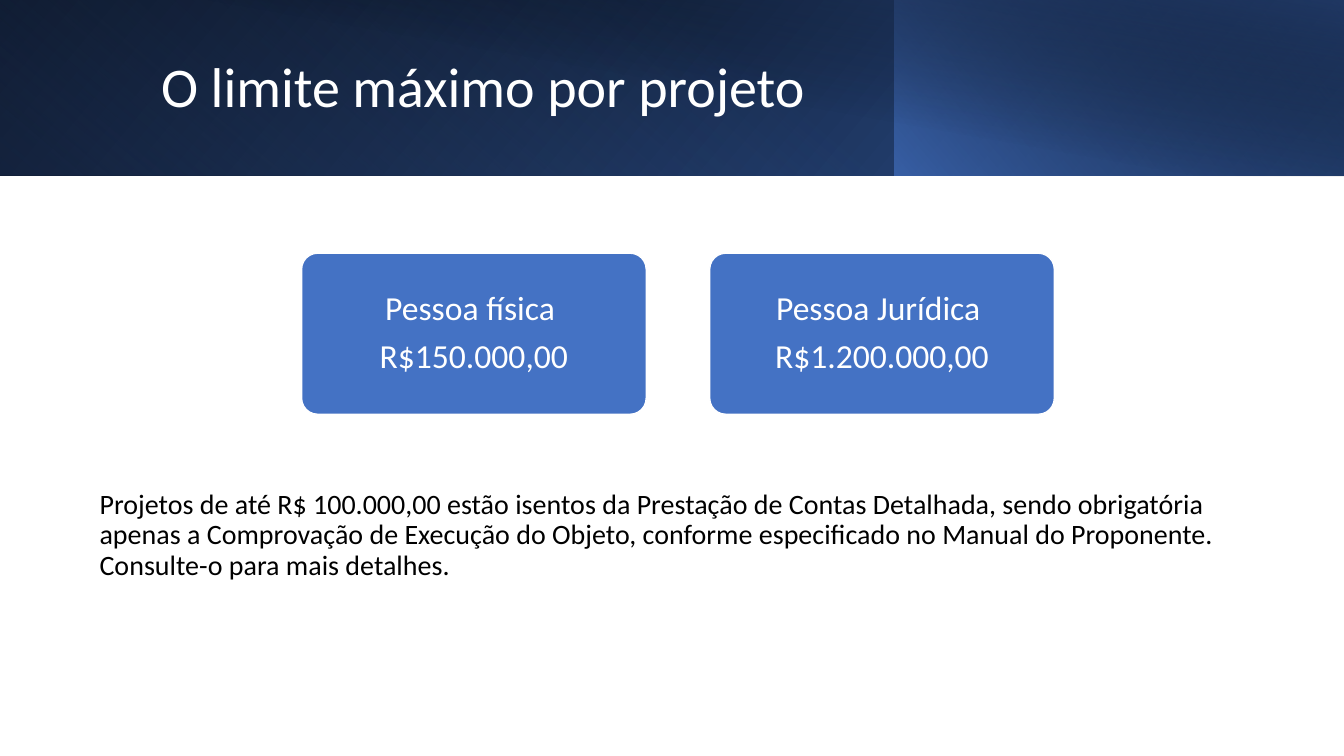
from lxml.etree import SubElement
from pptx import Presentation
from pptx.dml.color import RGBColor
from pptx.enum.shapes import MSO_SHAPE
from pptx.enum.text import MSO_ANCHOR, PP_ALIGN
from pptx.oxml.ns import qn
from pptx.util import Cm, Pt

WHITE = RGBColor(0xFF, 0xFF, 0xFF)
BLACK = RGBColor(0x00, 0x00, 0x00)
BLUE = RGBColor(0x44, 0x72, 0xC4)
NAVY = RGBColor(0x20, 0x38, 0x64)
STEEL = RGBColor(0x2F, 0x55, 0x97)
FONT = "Calibri"
WIDE, HIGH = 33.87, 19.05


def write(frame, lines, size, color, align=PP_ALIGN.LEFT, after=0):
    """Fill a text frame with one paragraph per line, centred vertically."""
    frame.word_wrap = True
    frame.vertical_anchor = MSO_ANCHOR.MIDDLE
    frame.text = "\n".join(lines)
    for para in frame.paragraphs:
        para.alignment = align
        para.line_spacing = 0.9
        para.space_after = Pt(after)
        for run in para.runs:
            run.font.name = FONT
            run.font.size = Pt(size)
            run.font.color.rgb = color


def add_box(slide, kind, box):
    """Add a preset shape without shadow or outline."""
    shape = slide.shapes.add_shape(kind, *map(Cm, box))
    shape.shadow.inherit = False
    shape.line.fill.background()
    return shape


def add_layer(slide, box, stops, angle, flip=True, turn=0):
    """Add a rectangle with a gradient of (position, colour, opacity) stops."""
    shape = add_box(slide, MSO_SHAPE.RECTANGLE, box)
    shape.rotation = turn
    if flip:
        shape.element.spPr.find(qn("a:xfrm")).set("flipH", "1")
    shape.fill.gradient()
    grad = shape.element.spPr.find(qn("a:gradFill"))
    for child in list(grad):
        grad.remove(child)
    ramp = SubElement(grad, qn("a:gsLst"))
    for place, color, alpha in stops:
        stop = SubElement(ramp, qn("a:gs"), pos=str(place * 1000))
        tint = SubElement(stop, qn("a:srgbClr"), val=str(color))
        if alpha < 100:
            SubElement(tint, qn("a:alpha"), val=str(alpha * 1000))
    SubElement(grad, qn("a:lin"), ang=str(angle * 60000), scaled="0")


def add_header(slide, box, title):
    """Draw the layered gradient band and its title."""
    left, top, width, height = box
    split = width * 2 / 3
    inset = 1.27
    add_layer(slide, box, [(0, BLACK, 100), (100, STEEL, 100)], 140)
    add_layer(slide, (left, top, split, height),
              [(20, BLUE, 0), (100, NAVY, 55)], 230, turn=180)
    add_layer(slide, (left + split - 0.03, top, width - split + 0.03, height),
              [(0, BLUE, 66), (100, BLACK, 30)], 220)
    add_layer(slide, (left + inset, top, width - inset, height + 0.02),
              [(50, BLACK, 0), (99, NAVY, 52)], 280, flip=False)
    area = left + 3.81, top + 0.81, width - 6.39, 2.87
    label = slide.shapes.add_textbox(*map(Cm, area))
    write(label.text_frame, [title], 40, WHITE)


def add_cards(slide, box, cards, gap):
    """Draw equal rounded cards side by side across the box."""
    left, top, width, height = box
    each = (width - gap * (len(cards) - 1)) / len(cards)
    for index, lines in enumerate(cards):
        spot = left + index * (each + gap), top, each, height
        card = add_box(slide, MSO_SHAPE.ROUNDED_RECTANGLE, spot)
        card.adjustments[0] = 0.1
        card.fill.solid()
        card.fill.fore_color.rgb = BLUE
        card.line.color.rgb = WHITE
        card.line.width = Pt(1)
        frame = card.text_frame
        frame.margin_left = frame.margin_right = Cm(0.3)
        frame.margin_top = frame.margin_bottom = Cm(0.25)
        write(frame, lines, 24, WHITE, PP_ALIGN.CENTER, 8.4)


def add_note(slide, box, text):
    """Write the closing paragraph in the box."""
    note = slide.shapes.add_textbox(*map(Cm, box))
    write(note.text_frame, [text], 20, BLACK)


def main():
    """Build and save the slide."""
    deck = Presentation()
    deck.slide_width, deck.slide_height = Cm(WIDE), Cm(HIGH)
    slide = deck.slides.add_slide(deck.slide_layouts[6])
    add_header(slide, (0, 0, WIDE, 4.42), "O limite máximo por projeto")
    add_cards(slide, (7.6, 6.38, 18.97, 4.06), [
        ("Pessoa física ", "R$150.000,00"),
        ("Pessoa Jurídica ", "R$1.200.000,00"),
    ], 1.6)
    add_note(slide, (2.26, 10.9, 29.36, 5.2),
             "Projetos de até R$ 100.000,00 estão isentos da Prestação de "
             "Contas Detalhada, sendo obrigatória apenas a Comprovação de "
             "Execução do Objeto, conforme especificado no Manual do "
             "Proponente. Consulte-o para mais detalhes.")
    deck.save("out.pptx")


if __name__ == "__main__":
    main()
